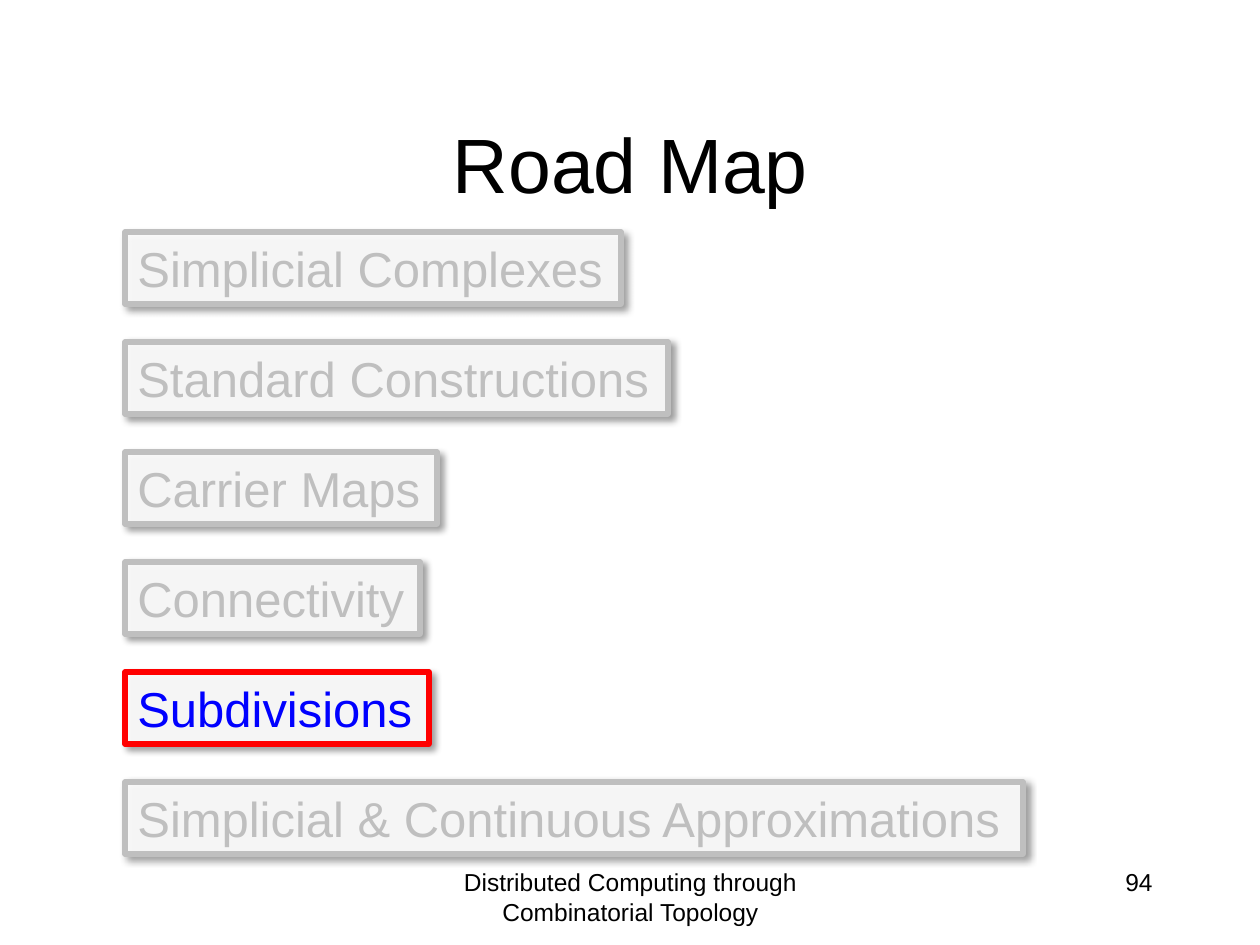
from lxml import etree
from pptx import Presentation
from pptx import util as u
from pptx.dml.color import RGBColor
from pptx.enum import shapes, text
from pptx.oxml import ns

PX = 914400 / 126
BLACK = RGBColor(0, 0, 0)
WHITE = RGBColor(255, 255, 255)
GRAY = RGBColor(0xBF, 0xBF, 0xBF)
RED = RGBColor(255, 0, 0)
BLUE = RGBColor(0, 0, 255)

TOPICS = [
    ("Simplicial Complexes", 496),
    ("Standard Constructions", 543),
    ("Carrier Maps", 312),
    ("Connectivity", 295),
    ("Subdivisions", 304),
    ("Simplicial & Continuous Approximations", 898),
]
CURRENT = "Subdivisions"
TOPIC_LEFT, TOPIC_TOP, TOPIC_HEIGHT, TOPIC_STEP = 125, 232, 72, 110


def px(*lengths):
    return [u.Emu(round(length * PX)) for length in lengths]


def write(shape, words, size, color=BLACK, align=text.PP_ALIGN.LEFT,
          anchor=text.MSO_ANCHOR.TOP, wrap=True):
    frame = shape.text_frame
    frame.word_wrap = wrap
    frame.vertical_anchor = anchor
    paragraph = frame.paragraphs[0]
    paragraph.alignment = align
    run = paragraph.add_run()
    run.text = words
    run.font.name = "Arial"
    run.font.size = u.Pt(size)
    run.font.color.rgb = color


def add_alpha(color_element, percent):
    alpha = etree.SubElement(color_element, ns.qn("a:alpha"))
    alpha.set("val", str(percent * 1000))


def add_shadow(shape):
    shape.shadow.inherit = False
    effects = shape._element.spPr.find(ns.qn("a:effectLst"))
    shadow = etree.SubElement(
        effects, ns.qn("a:outerShdw"), blurRad=str(u.Pt(4)), dist=str(u.Pt(3)),
        dir=str(45 * 60000), algn="tl", rotWithShape="0")
    color = etree.SubElement(shadow, ns.qn("a:srgbClr"), val=str(BLACK))
    add_alpha(color, 40)


def add_title(slide, words):
    title = slide.shapes.title
    title.left, title.top, title.width, title.height = px(95, 84, 1071, 158)
    write(title, words, 44, align=text.PP_ALIGN.CENTER,
          anchor=text.MSO_ANCHOR.MIDDLE)


def add_topic(slide, words, top, width, line_color, text_color):
    box = slide.shapes.add_shape(
        shapes.MSO_SHAPE.RECTANGLE, *px(TOPIC_LEFT, top, width, TOPIC_HEIGHT))
    box.fill.solid()
    box.fill.fore_color.rgb = WHITE
    add_alpha(box._element.spPr.find(".//" + ns.qn("a:srgbClr")), 90)
    box.line.color.rgb = line_color
    box.line.width = u.Pt(3)
    add_shadow(box)
    write(box, words, 28, color=text_color, wrap=False)
    box.text_frame.auto_size = text.MSO_AUTO_SIZE.SHAPE_TO_FIT_TEXT


def add_footer(slide, words, left, width, align):
    box = slide.shapes.add_textbox(*px(left, 861, width, 63))
    write(box, words, 14, align=align)


def main():
    presentation = Presentation()
    presentation.slide_width, presentation.slide_height = px(1260, 945)
    slide = presentation.slides.add_slide(presentation.slide_layouts[5])
    add_title(slide, "Road Map")
    for index, (words, width) in enumerate(TOPICS):
        line_color, text_color = (RED, BLUE) if words == CURRENT else (GRAY, GRAY)
        add_topic(slide, words, TOPIC_TOP + index * TOPIC_STEP, width,
                  line_color, text_color)
    add_footer(slide, "Distributed Computing through Combinatorial Topology",
               431, 399, text.PP_ALIGN.CENTER)
    add_footer(slide, "94", 903, 262, text.PP_ALIGN.RIGHT)
    presentation.save("out.pptx")


if __name__ == "__main__":
    main()
